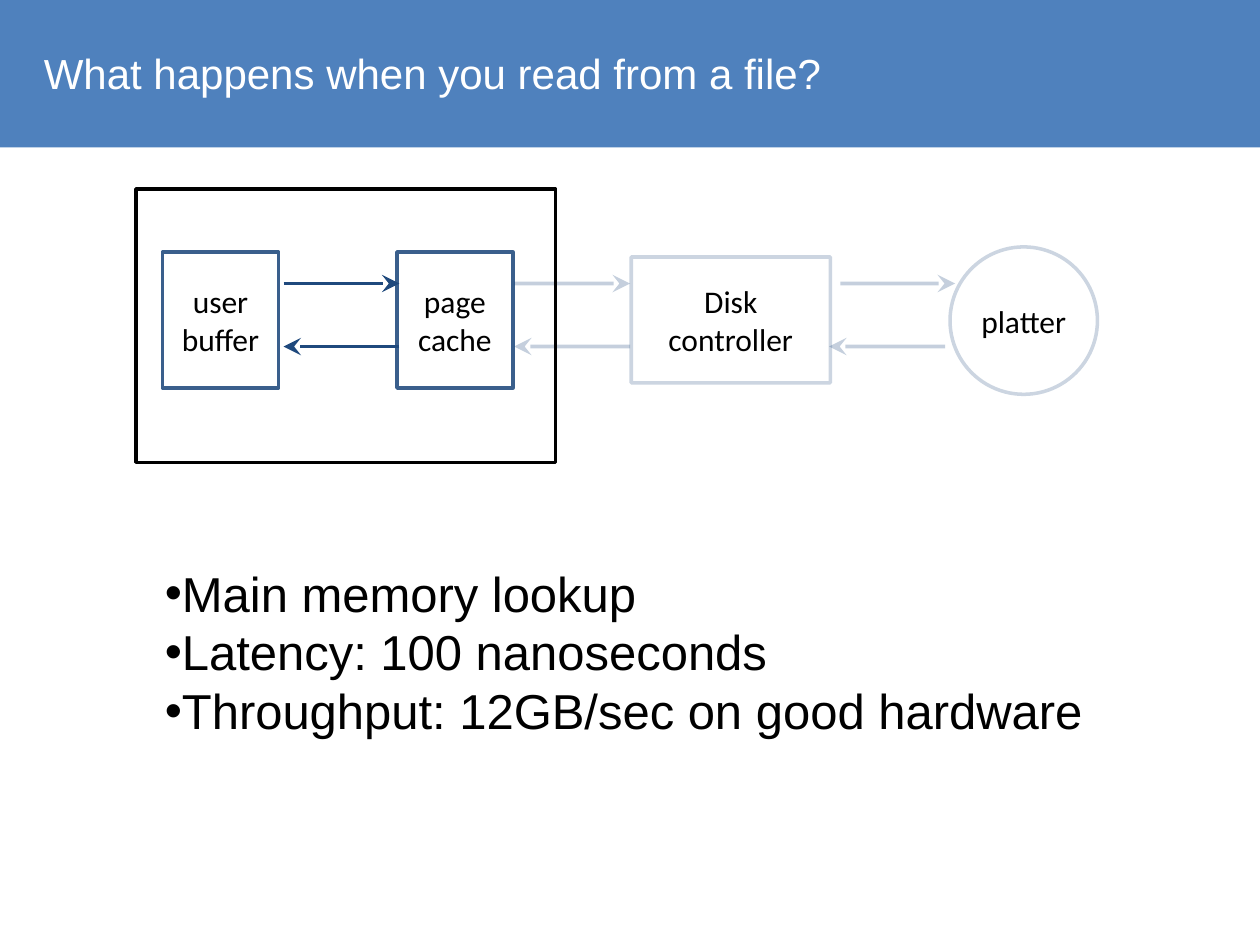
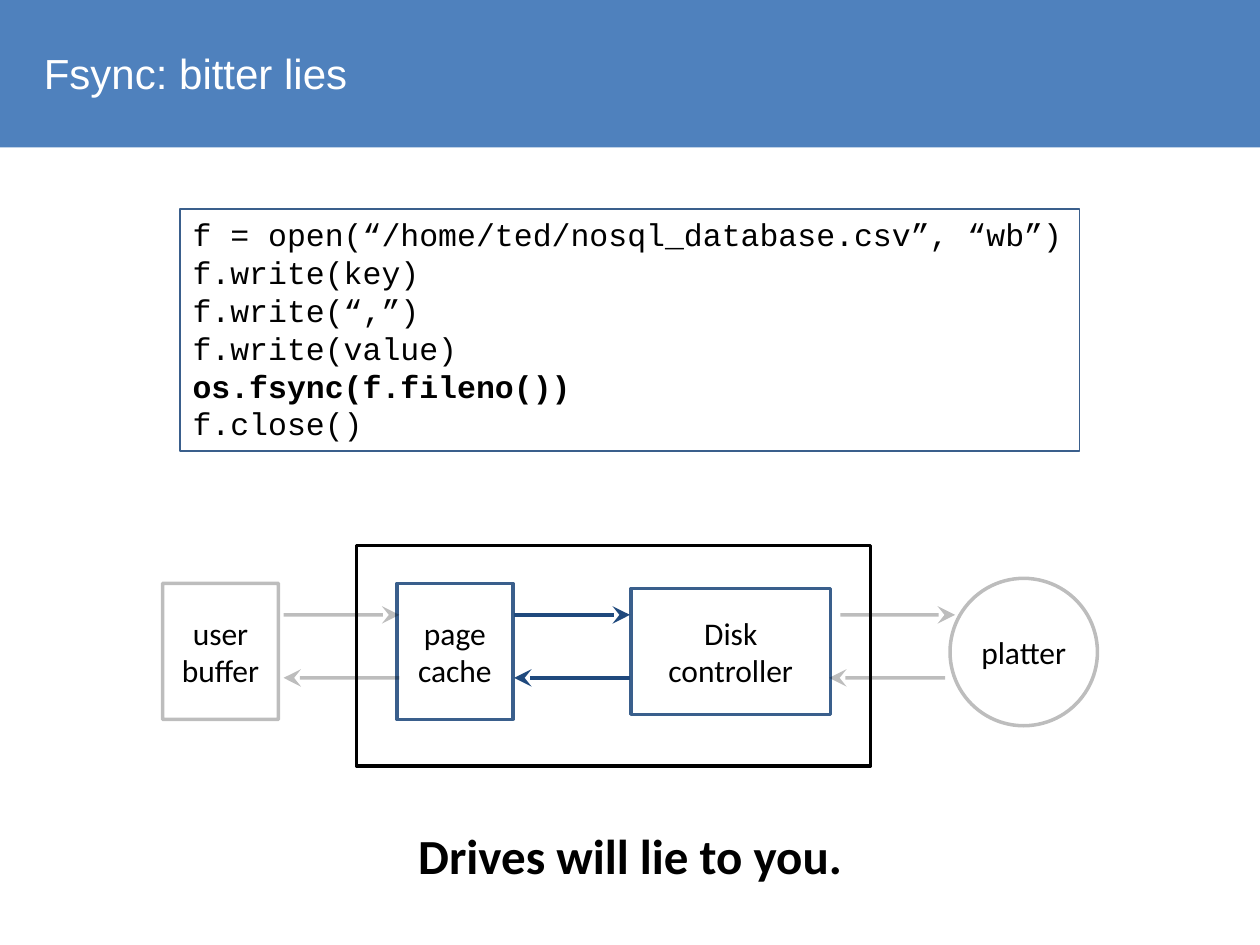
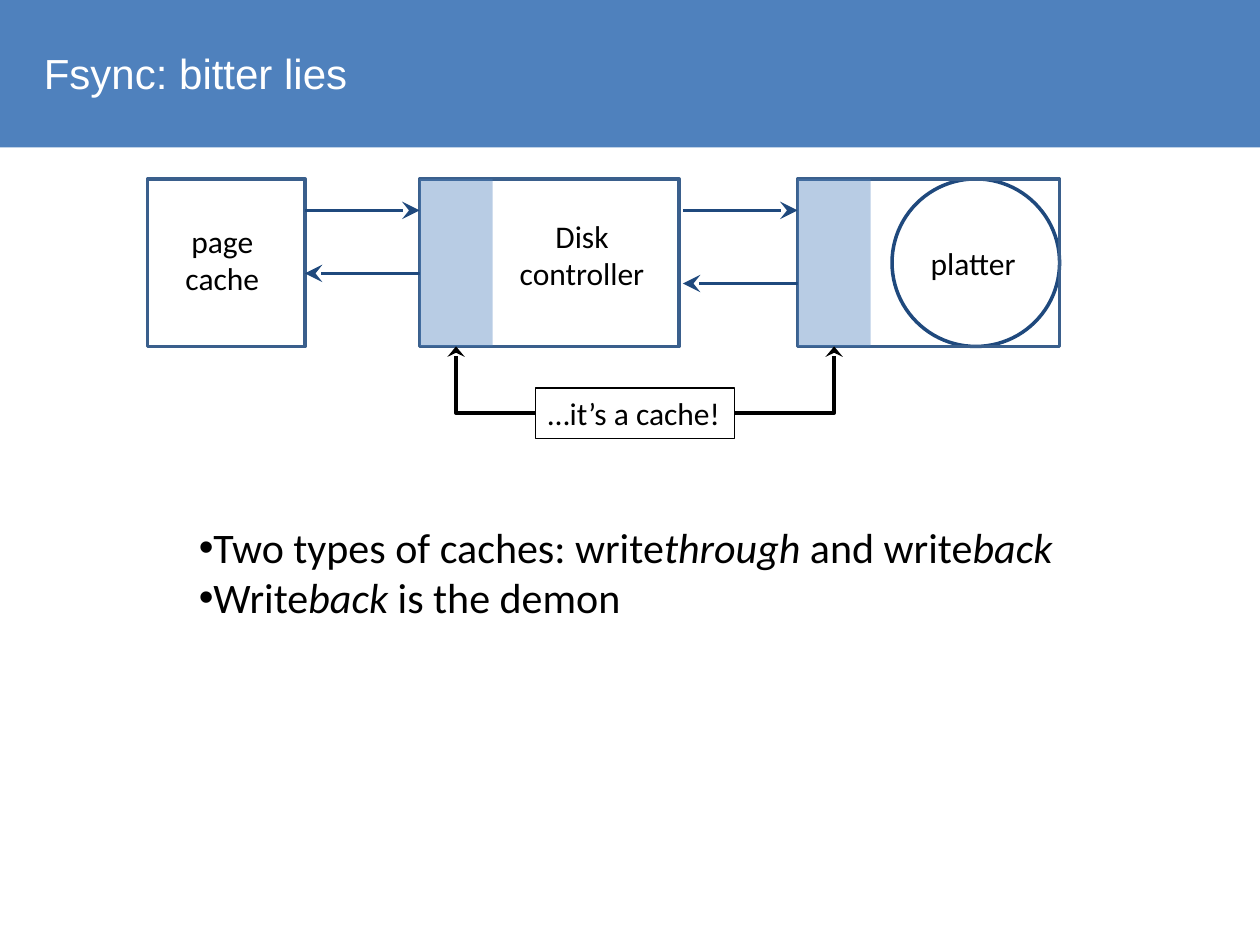
import pptx
import pptx.util
import pptx.dml.color
import pptx.enum.shapes
import pptx.enum.text
import pptx.oxml.ns
import lxml.etree

Inches = pptx.util.Inches
SHAPE = pptx.enum.shapes.MSO_SHAPE
CONNECTOR = pptx.enum.shapes.MSO_CONNECTOR
ALIGN = pptx.enum.text.PP_ALIGN
ANCHOR = pptx.enum.text.MSO_ANCHOR
RGB = pptx.dml.color.RGBColor.from_string
qn = pptx.oxml.ns.qn

COLOURS = {"band": "4F81BD", "edge": "3A5F8C", "arrow": "1F497D",
           "black": "000000", "white": "FFFFFF"}
MUTED = 25  # opacity, in percent, of inactive parts


def add_block(slide, at, paragraphs=(), kind=SHAPE.RECTANGLE, fill=None, line=None, width=2,
              opacity=100, font="Calibri", size=18, colour="black", align=ALIGN.LEFT,
              anchor=ANCHOR.TOP, bullet=False):
    """Add a shape, or a text box if kind is None; *stars* enclose italic text."""
    box = [Inches(length) for length in at]
    if kind is None:
        block = slide.shapes.add_textbox(*box)
    else:
        block = slide.shapes.add_shape(kind, *box)
        block.shadow.inherit = False
    if fill:
        block.fill.solid()
        block.fill.fore_color.rgb = RGB(COLOURS[fill])
    else:
        block.fill.background()
    if line:
        block.line.color.rgb = RGB(COLOURS[line])
        block.line.width = pptx.util.Pt(width)
    else:
        block.line.fill.background()
    if opacity < 100:
        tint = block.element.spPr.find(".//" + qn("a:srgbClr"))
        lxml.etree.SubElement(tint, qn("a:alpha"), val=str(opacity * 1000))

    frame = block.text_frame
    frame.word_wrap = False
    frame.vertical_anchor = anchor
    for number, text in enumerate(paragraphs):
        paragraph = frame.add_paragraph() if number else frame.paragraphs[0]
        paragraph.alignment = align
        paragraph.font.name = font
        paragraph.font.size = pptx.util.Pt(size)
        paragraph.font.color.rgb = RGB(COLOURS[colour])
        for position, part in enumerate(text.split("*")):
            run = paragraph.add_run()
            run.text = part
            if position % 2:
                run.font.italic = True
        if bullet:
            for mark in (lxml.etree.Element(qn("a:buFont"), typeface="Arial"),
                         lxml.etree.Element(qn("a:buChar"), char="•")):
                paragraph.font._element.addprevious(mark)
    return block


def add_arrow(slide, start, end, colour="arrow", opacity=100, kind=CONNECTOR.STRAIGHT,
              head_length="lg"):
    arrow = slide.shapes.add_connector(kind, *[Inches(length) for length in (*start, *end)])
    arrow.line.color.rgb = RGB(COLOURS[colour])
    arrow.line.width = pptx.util.Pt(2)
    properties = arrow.element.spPr
    if opacity < 100:
        tint = properties.find(".//" + qn("a:srgbClr"))
        lxml.etree.SubElement(tint, qn("a:alpha"), val=str(opacity * 1000))
    lxml.etree.SubElement(properties.find(qn("a:ln")), qn("a:tailEnd"),
                          type="stealth", w="lg", len=head_length)
    lxml.etree.SubElement(properties, qn("a:effectLst"))
    return arrow


deck = pptx.Presentation()
deck.slide_width, deck.slide_height = Inches(10), Inches(7.5)

# Title bands
slides = []
for title, title_width in [("What happens when you read from a file?", 6.44),
                           ("Fsync: bitter lies", 2.63),
                           ("Fsync: bitter lies", 2.63)]:
    slide = deck.slides.add_slide(deck.slide_layouts[6])
    add_block(slide, (0, 0, 10, 1.17), fill="band")
    add_block(slide, (0.25, 0.33, title_width, 0.5), [title], kind=None,
              font="Arial", size=24, colour="white")
    slides.append(slide)
read_slide, fsync_slide, cache_slide = slides

# Code on the fsync slide
code = add_block(fsync_slide, (1.43, 1.66, 7.14, 1.92),
                 ["f = open(“/home/ted/nosql_database.csv”, “wb”)", "f.write(key)",
                  "f.write(“,”)", "f.write(value)", "os.fsync(f.fileno())", "f.close()"],
                 line="edge", width=0.75, font="Courier New")
code.text_frame.paragraphs[4].font.bold = True

# Storage chain: x, offset from the chain's top, width, height, words
stages = [(1.29, 0.04, 0.92, 1.08, ["user", "buffer"], SHAPE.RECTANGLE),
          (3.15, 0.04, 0.92, 1.08, ["page", "cache"], SHAPE.RECTANGLE),
          (5.01, 0.08, 1.58, 1, ["Disk", "controller"], SHAPE.RECTANGLE),
          (7.54, 0, 1.17, 1.17, ["platter"], SHAPE.OVAL)]
hops = [(2.25, 3.17, 3.17, 2.25), (4.08, 5, 5, 4.08), (6.67, 7.58, 7.5, 6.58)]

# Per slide: chain top, active stages, active hop, muted colours, frame round the active part
chains = [(read_slide, 1.96, (0, 1), 0, "edge", "arrow", (1.08, 1.5, 3.33, 2.17)),
          (fsync_slide, 4.59, (1, 2), 1, "black", "black", (2.83, 4.33, 4.08, 1.75))]
for slide, top, active_stages, active_hop, muted_edge, muted_arrow, focus in chains:
    for number, (x, offset, width, height, words, kind) in enumerate(stages):
        active = number in active_stages
        stage = add_block(slide, (x, top + offset, width, height), words, kind=kind,
                          line="edge" if active else muted_edge,
                          opacity=100 if active else MUTED,
                          align=ALIGN.CENTER, anchor=ANCHOR.MIDDLE)
        stage.text_frame.margin_left = stage.text_frame.margin_right = 0
    for number, (out_start, out_end, back_start, back_end) in enumerate(hops):
        active = number == active_hop
        look = ("arrow", 100) if active else (muted_arrow, MUTED)
        add_arrow(slide, (out_start, top + 0.29), (out_end, top + 0.29), *look)
        add_arrow(slide, (back_start, top + 0.79), (back_end, top + 0.79), *look)
    add_block(slide, focus, line="black")

# Closing words under the chains
add_block(read_slide, (1.21, 4.42, 7.58, 1.51),
          ["Main memory lookup", "Latency: 100 nanoseconds",
           "Throughput: 12GB/sec on good hardware"],
          kind=None, font="Arial", size=28, bullet=True)
warning = add_block(fsync_slide, (3.2, 6.5, 3.6, 0.57), ["Drives will lie to you."],
                    kind=None, size=28, align=ALIGN.CENTER)
warning.text_frame.paragraphs[0].font.bold = True

# Where the caches sit
top, height = 1.42, 1.33
centred = {"align": ALIGN.CENTER, "anchor": ANCHOR.MIDDLE}
page_cache = add_block(cache_slide, (1.17, top, 1.25, height), ["page", "cache"],
                       line="edge", **centred)
page_cache.text_frame.margin_right = Inches(0.16)
page_cache.text_frame.margin_bottom = Inches(0.1)
controller = add_block(cache_slide, (3.33, top, 2.06, height), ["Disk", "controller"],
                       line="edge", **centred)
controller.text_frame.margin_left = Inches(0.52)
controller.text_frame.margin_right = 0
controller.text_frame.margin_bottom = Inches(0.18)
platter = add_block(cache_slide, (7.08, top, 1.33, height), ["platter"], kind=SHAPE.OVAL,
                    line="arrow", **centred)
platter.text_frame.margin_right = Inches(0.14)
add_block(cache_slide, (6.33, top, 2.08, height), line="edge")

for start, end, y in [(2.42, 3.33, 1.67), (3.33, 2.42, 2.17),
                      (5.42, 6.33, 1.67), (6.33, 5.42, 2.25)]:
    add_arrow(cache_slide, (start, y), (end, y))

# Cache label, joined to both caches
label = add_block(cache_slide, (4.25, 3.08, 1.58, 0.4), ["…it’s a cache!"],
                  line="black", width=0.75)
for cache_x, label_x, label_side in [(3.33, 4.25, 1), (6.33, 5.83, 3)]:
    cache = add_block(cache_slide, (cache_x, top, 0.58, height), fill="band", opacity=40)
    pointer = add_arrow(cache_slide, (label_x, 3.28), (cache_x + 0.29, top + height),
                        colour="black", kind=CONNECTOR.ELBOW, head_length="med")
    pointer.element.spPr.find(qn("a:prstGeom")).set("prst", "bentConnector2")
    pointer.begin_connect(label, label_side)
    pointer.end_connect(cache, 2)

add_block(cache_slide, (1.48, 4.09, 7.04, 2.12),
          ["Two types of caches: write*through* and write*back*", "Write*back* is the demon"],
          kind=None, size=24, bullet=True)

deck.save("out.pptx")
